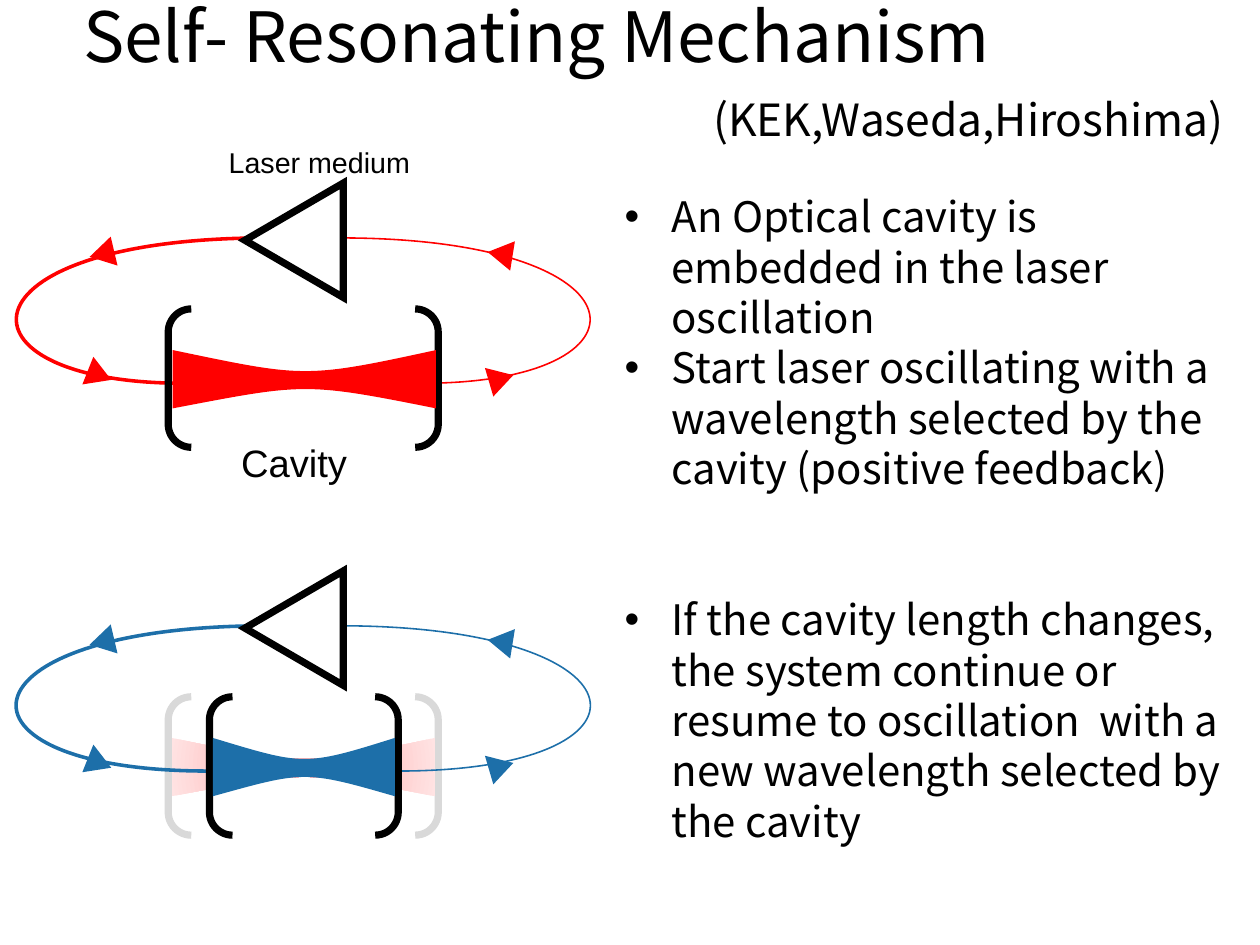
"""Build the self-resonating mechanism slide: two laser loops with optical cavities."""
import pptx
import pptx.util
import pptx.dml.color
import pptx.enum.shapes
import pptx.enum.text
import pptx.oxml
import pptx.oxml.ns
import lxml.etree

Inches, Pt = pptx.util.Inches, pptx.util.Pt
rgb = pptx.dml.color.RGBColor.from_string
qn = pptx.oxml.ns.qn
SubElement = lxml.etree.SubElement
MSO_SHAPE = pptx.enum.shapes.MSO_SHAPE
ALIGN = pptx.enum.text.PP_ALIGN

theme = {
    "black": "000000", "white": "FFFFFF", "red": "FF0000", "blue": "1D6FA9",
    "ghost": "D9D9D9", "ghost_in": "FFA0A0", "ghost_out": "FFE3E3",
    "font": "Noto Sans CJK JP", "label_font": "Arial",
    "title": 43.6, "credit": 27.9, "body": 26.4, "medium": 18, "cavity": 24,
    "heavy": 4.5, "strong": 2.25, "weak": 1,
}

prs = pptx.Presentation()
prs.slide_width, prs.slide_height = Inches(11.01), Inches(8.26)
slide = prs.slides.add_slide(prs.slide_layouts[6])


def add_text(tf, text, size, font=theme["font"], align=ALIGN.LEFT,
             before=0, spacing=1.0, bullet=False):
    """Add a paragraph to a text frame, using its empty first one if there is one."""
    p = tf.paragraphs[0] if not tf.text else tf.add_paragraph()
    p.alignment, p.space_before, p.line_spacing = align, Pt(before), spacing
    r = p.add_run()
    r.text = text
    r.font.name, r.font.size = font, Pt(size)
    r.font.color.rgb = rgb(theme["black"])
    if bullet:
        pPr = p._p.get_or_add_pPr()
        pPr.set("marL", str(Inches(0.41)))
        pPr.set("indent", str(-Inches(0.41)))
        SubElement(pPr, qn("a:buFont")).set("typeface", "Arial")
        SubElement(pPr, qn("a:buChar")).set("char", "•")


def add_curve(shapes, box, commands):
    """Draw moveTo, lnTo, cubicBezTo and close commands, in inches, inside a box."""
    left, top, right, bottom = box
    builder = shapes.build_freeform(Inches(left), Inches(top))
    builder.add_line_segments([(Inches(right), Inches(bottom))], close=False)
    s = builder.convert_to_shape()
    s.shadow.inherit = False
    outline = next(s._element.iter(qn("a:path")))
    for child in list(outline):
        outline.remove(child)
    for name, *points in commands:
        command = SubElement(outline, qn(f"a:{name}"))
        for x, y in points:
            pt = SubElement(command, qn("a:pt"))
            pt.set("x", str(Inches(x - left)))
            pt.set("y", str(Inches(y - top)))
    return s


arrows = [(0.76, 2.11, 256.7), (0.74, 3.17, 111.7), (4.24, 2.11, 279.1), (4.25, 3.2, 73.6)]
stages = [
    {"dy": 3.39, "bracket": (1.47, 2.36), "waist": (1.5, 3.8),
     "bracket_color": theme["ghost"], "color": None},
    {"dy": 0, "bracket": (1.47, 2.36), "waist": (1.51, 3.81),
     "bracket_color": theme["black"], "color": theme["red"], "loop": (-0.47, 1.6)},
    {"dy": 3.39, "bracket": (1.83, 1.65), "waist": (1.86, 3.45),
     "bracket_color": theme["black"], "color": theme["blue"], "loop": (-0.56, 1.82)},
]

for stage in stages:
    dy, color = stage["dy"], stage["color"]
    if color:
        bend, end = stage["loop"]
        half = [(2.3, 2.08 + dy), (-0.42, 2.09 + dy), (bend, 3.35 + dy), (end, 3.35 + dy)]
        mirrored = [(5.3 - x, y) for x, y in half]
        for x0, x1, curve, width in ((0.14, 2.3, half, theme["strong"]),
                                     (3, 5.16, mirrored, theme["weak"])):
            s = add_curve(slide.shapes, (x0, 2.08 + dy, x1, 3.35 + dy),
                          [("moveTo", curve[0]), ("cubicBezTo", *curve[1:])])
            s.fill.background()
            s.line.color.rgb, s.line.width = rgb(color), Pt(width)
        triangles = [(x, y, 0.26, 0.22, angle, color) for x, y, angle in arrows]
        triangles.append((2.07, 1.67, 1, 0.86, 270, theme["white"]))
        for x, y, w, h, angle, fill in triangles:
            s = slide.shapes.add_shape(MSO_SHAPE.ISOSCELES_TRIANGLE, Inches(x),
                                       Inches(y + dy), Inches(w), Inches(h))
            s.rotation = angle
            s.shadow.inherit = False
            s.fill.solid()
            s.fill.fore_color.rgb = rgb(fill)
            s.line.fill.background()
        s.line.color.rgb, s.line.width = rgb(theme["black"]), Pt(theme["heavy"])
        SubElement(s._element.spPr.find(qn("a:ln")), qn("a:miter")).set("lim", "800000")

    cavity = slide.shapes.add_group_shape()
    left, width = stage["bracket"]
    s = cavity.shapes.add_shape(MSO_SHAPE.DOUBLE_BRACKET, Inches(left), Inches(2.7 + dy),
                                Inches(width), Inches(1.21))
    s.shadow.inherit = False
    s.fill.background()
    s.line.color.rgb, s.line.width = rgb(stage["bracket_color"]), Pt(theme["heavy"])

    x0, x1 = stage["waist"]
    mid, top, bottom = (x0 + x1) / 2, 3.06 + dy, 3.57 + dy
    s = add_curve(cavity.shapes, (x0, top, x1, bottom), [
        ("moveTo", (x0, top)),
        ("cubicBezTo", (mid, top + 0.24), (mid, top + 0.25), (x1, top)),
        ("lnTo", (x1, bottom)),
        ("cubicBezTo", (mid, bottom - 0.23), (mid, bottom - 0.22), (x0, bottom)),
        ("close",),
    ])
    s.line.fill.background()
    if color:
        s.fill.solid()
        s.fill.fore_color.rgb = rgb(color)
    else:
        s.fill.gradient()
        for stop, tint in zip(s.fill.gradient_stops, ("ghost_in", "ghost_out")):
            stop.color.rgb = rgb(theme[tint])
        grad = s._element.spPr.find(qn("a:gradFill"))
        grad.remove(grad.find(qn("a:lin")))
        radial = SubElement(grad, qn("a:path"))
        radial.set("path", "circle")
        center = SubElement(radial, qn("a:fillToRect"))
        for side in "ltrb":
            center.set(side, "50000")

title = slide.shapes.add_textbox(Inches(0.63), Inches(0.02), Inches(10.26), Inches(1.31))
tf = title.text_frame
tf.word_wrap = True
tf.margin_top, tf.margin_right = 0, Inches(0.2)
add_text(tf, "Self- Resonating Mechanism", theme["title"], spacing=0.9)
add_text(tf, "(KEK,Waseda,Hiroshima)", theme["credit"], align=ALIGN.RIGHT,
         before=13.5, spacing=0.9)

body = slide.shapes.add_textbox(Inches(5.36), Inches(1.62), Inches(5.52), Inches(5.44))
tf = body.text_frame
tf.word_wrap = True
for text, before in (
    ("An Optical cavity is embedded in the laser oscillation", 0),
    ("Start laser oscillating with a wavelength selected by the cavity (positive feedback)", 0),
    ("If the cavity length changes, the system continue or resume to oscillation  with a "
     "new wavelength selected by the cavity", 63.7),
):
    add_text(tf, text, theme["body"], before=before, bullet=True)

for text, x, y, w, h, size in (
    ("Laser medium", 1.89, 1.22, 1.8, 0.4, theme["medium"]),
    ("Cavity", 2, 3.79, 1.14, 0.5, theme["cavity"]),
):
    label = slide.shapes.add_textbox(Inches(x), Inches(y), Inches(w), Inches(h))
    label.text_frame.word_wrap = False
    add_text(label.text_frame, text, size, font=theme["label_font"], align=ALIGN.CENTER)

prs.save("out.pptx")
